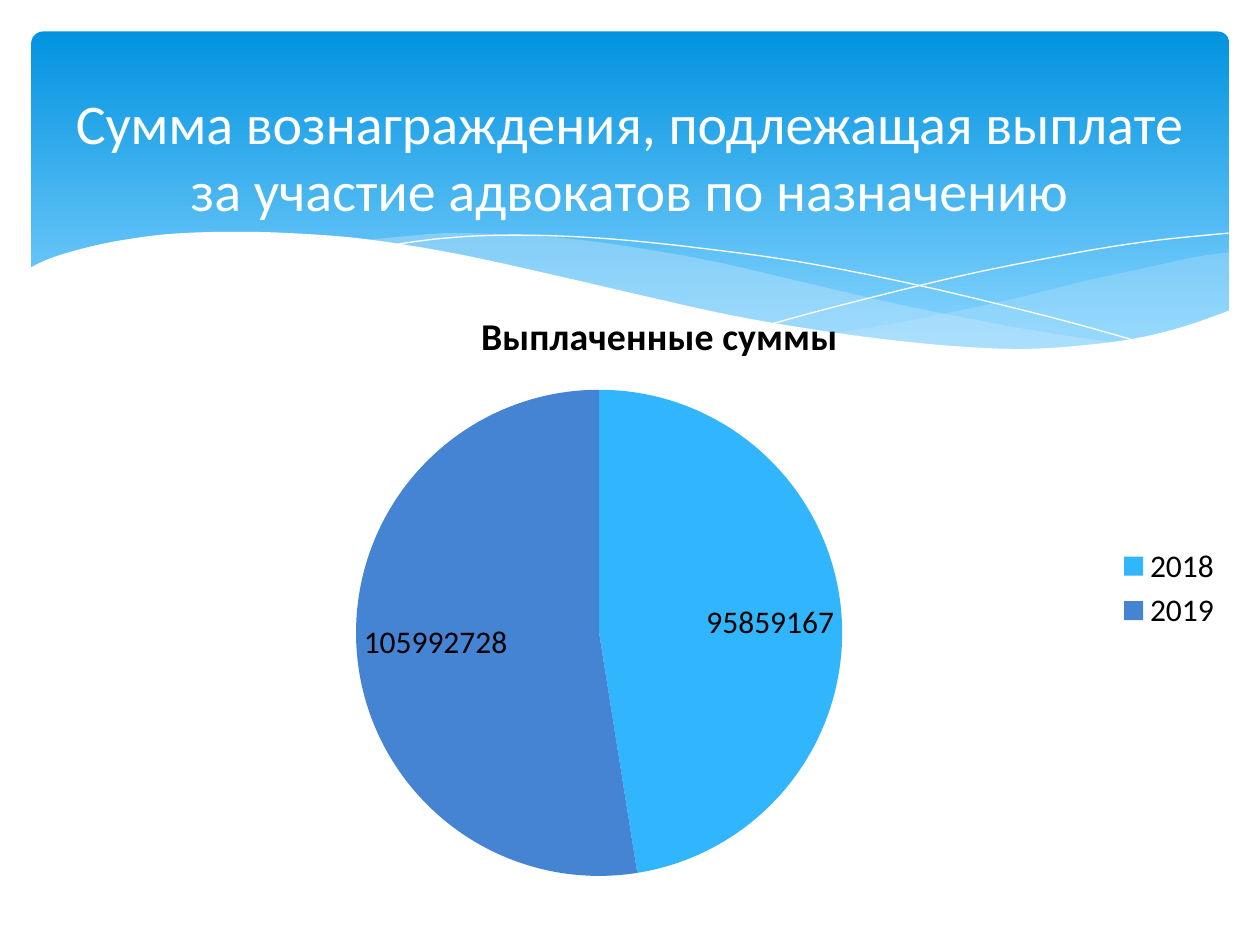
"""Build the slide with the attorney fee pie chart under a wavy blue banner."""
from lxml.etree import SubElement
from pptx import Presentation
from pptx.chart.data import CategoryChartData
from pptx.dml.color import RGBColor
from pptx.enum.chart import XL_CHART_TYPE as ChartType, XL_LEGEND_POSITION as LegendPosition
from pptx.enum.shapes import MSO_SHAPE as Shape
from pptx.enum.text import MSO_ANCHOR as Anchor, PP_ALIGN as Align
from pptx.oxml.ns import qn
from pptx.util import Pt

FONT = "Calibri"
TITLE = "Сумма вознаграждения, подлежащая выплате за участие адвокатов по назначению"
CHART_TITLE = "Выплаченные суммы"
PAYMENTS = [("2018", 95859167, "31B6FD"), ("2019", 105992728, "4584D3")]
BANNER_STOPS = [(0, "0293E0"), (0.9, "83D3FE")]

RIGHT_WAVE = [
    [(702.7, 144), (682.6, 146.9), (663.1, 151.2), (619.9, 160.6), (579.6, 170.6),
     (524.9, 182.2), (475.9, 190.8)],
    [(475.9, 190.8), (507.6, 195.1), (545, 198.7), (578.2, 200.2), (614.9, 198.7),
     (645.8, 194.4), (673.2, 188.6), (702.7, 177.8)],
]
MIDDLE_WAVE = [
    [(643, 196.6), (602.6, 190.8), (558, 182.9), (508.3, 172.8), (452.9, 159.8),
     (409.7, 149.8), (370.1, 142.6), (334.8, 137.5), (302.4, 134.6), (259.9, 133.2),
     (236.2, 134.6), (205.9, 137.5)],
    [(205.9, 137.5), (246.2, 143.3), (290.9, 151.9), (323.3, 159.8), (381.6, 172.8),
     (432.7, 183.6), (478.8, 191.5), (519.8, 197.3), (556.6, 199.4), (589, 200.2),
     (617, 199.4), (643, 196.6)],
]
FALLING_LINE = [
    [(222.5, 140.4), (236.2, 138.2), (254.2, 136.1), (278.6, 134.6), (311.8, 134.6),
     (352.1, 136.8), (400.3, 141.8), (457.9, 149.8), (523.4, 162.7), (598.3, 180.7),
     (653, 195.8)],
]
RISING_LINE = [
    [(441.4, 185), (470.2, 177.1), (518.4, 164.9), (558.7, 155.5), (601.9, 146.9),
     (634.3, 141.1), (665.3, 136.8), (702, 133.2)],
]
WHITE_WAVE = [
    [(703.4, 177.1), (676.8, 186.5), (647.3, 193.7), (612, 198), (582.5, 199.4),
     (547.9, 198), (509.8, 194.4), (466.6, 188.6), (416.9, 180), (362.2, 167.8),
     (321.8, 158.4), (262.8, 145.4), (210.2, 136.8), (165.6, 133.2), (127.4, 132.5),
     (95, 133.9), (68.4, 137.5), (48.2, 141.8), (28.8, 147.6), (16.6, 153.4)],
    [(16.6, 236.9), (703.4, 236.9)],
]
WAVES = [
    (RIGHT_WAVE, "C6E7FC", 29),
    (MIDDLE_WAVE, "C6E7FC", 40),
    (FALLING_LINE, None, 100),
    (RISING_LINE, None, 100),
    (WHITE_WAVE, "FFFFFF", 100),
]


def color(value):
    return RGBColor.from_string(value)


def smooth_curve(knots, steps=5):
    """Pass a Catmull-Rom curve through the knots."""
    padded = [knots[0], *knots, knots[-1]]
    curve = [knots[0]]
    for a, b, c, d in zip(padded, padded[1:], padded[2:], padded[3:]):
        for step in range(1, steps + 1):
            t = step / steps
            curve.append(tuple(
                (2 * q + (r - p) * t + (2 * p - 5 * q + 4 * r - s) * t ** 2
                 + (3 * q - p - 3 * r + s) * t ** 3) / 2
                for p, q, r, s in zip(a, b, c, d)))
    return curve


def add_banner(page):
    banner = page.shapes.add_shape(Shape.ROUNDED_RECTANGLE, Pt(18), Pt(18), Pt(684.5), Pt(194.4))
    banner.adjustments[0] = 0.034
    banner.shadow.inherit = False
    banner.line.fill.background()
    banner.fill.gradient()
    banner.fill.gradient_angle = 270
    for stop, (position, tint) in zip(banner.fill.gradient_stops, BANNER_STOPS):
        stop.position = position
        stop.color.rgb = color(tint)


def add_wave(page, curves, tint, opacity):
    points = [(Pt(x), Pt(y)) for knots in curves for x, y in smooth_curve(knots)]
    builder = page.shapes.build_freeform(*points[0])
    builder.add_line_segments(points[1:], close=tint is not None)
    wave = builder.convert_to_shape()
    wave.shadow.inherit = False
    if tint is None:
        wave.fill.background()
        wave.line.color.rgb = color("FFFFFF")
        wave.line.width = Pt(0)
        return
    wave.line.fill.background()
    wave.fill.solid()
    wave.fill.fore_color.rgb = color(tint)
    if opacity < 100:
        swatch = wave.fill._xPr.find(".//" + qn("a:srgbClr"))
        SubElement(swatch, qn("a:alpha"), val=str(opacity * 1000))


def set_font(font, size, tint, bold=False):
    font.name = FONT
    font.size = Pt(size)
    font.bold = bold
    font.color.rgb = color(tint)


def add_payments_chart(page):
    data = CategoryChartData()
    data.categories = [year for year, _, _ in PAYMENTS]
    data.add_series(CHART_TITLE, [amount for _, amount, _ in PAYMENTS])
    frame = page.shapes.add_chart(ChartType.PIE, Pt(48.2), Pt(162), Pt(657.4), Pt(348.5), data)
    chart = frame.chart
    set_font(chart.font, 18, "000000")
    chart.has_title = True
    span = chart.chart_title.text_frame.paragraphs[0].add_run()
    span.text = CHART_TITLE
    set_font(span.font, 21.6, "000000", bold=True)
    chart.has_legend = True
    chart.legend.position = LegendPosition.RIGHT
    chart.legend.include_in_layout = False
    plot = chart.plots[0]
    plot.vary_by_categories = True
    plot.has_data_labels = True
    plot.data_labels.show_value = True
    plot.data_labels.show_percentage = False
    set_font(plot.data_labels.font, 18, "000000")
    for index, (_, _, tint) in enumerate(PAYMENTS):
        fill = plot.series[0].points[index].format.fill
        fill.solid()
        fill.fore_color.rgb = color(tint)


def add_title(page):
    box = page.shapes.add_textbox(Pt(36), Pt(26.6), Pt(648), Pt(124.6))
    box.text_frame.word_wrap = True
    box.text_frame.vertical_anchor = Anchor.MIDDLE
    para = box.text_frame.paragraphs[0]
    para.alignment = Align.CENTER
    span = para.add_run()
    span.text = TITLE
    set_font(span.font, 32, "FFFFFF")


def main():
    deck = Presentation()
    deck.slide_width, deck.slide_height = Pt(720), Pt(540)
    page = deck.slides.add_slide(deck.slide_layouts[6])
    add_banner(page)
    for curves, tint, opacity in WAVES:
        add_wave(page, curves, tint, opacity)
    add_payments_chart(page)
    add_title(page)
    deck.save("out.pptx")


if __name__ == "__main__":
    main()
